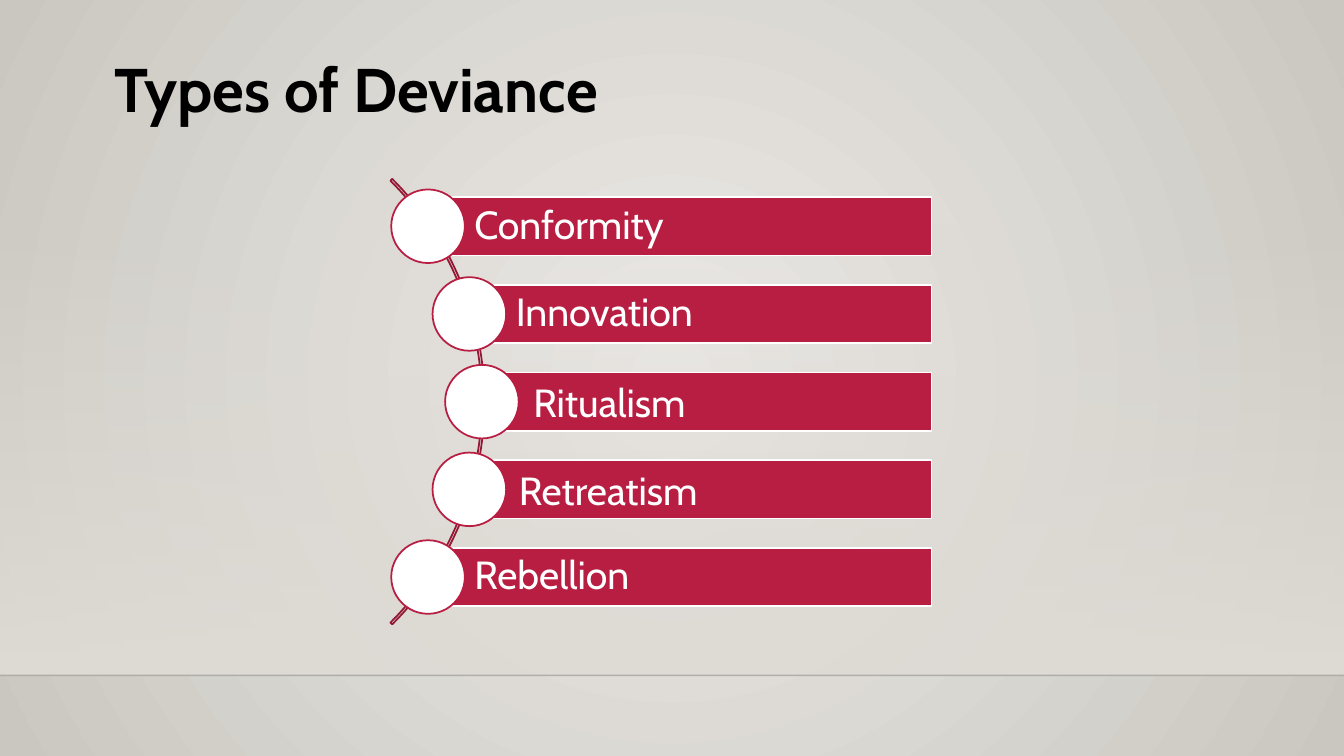
from dataclasses import dataclass
from math import sqrt

from lxml.etree import SubElement
from pptx import Presentation
from pptx.dml.color import RGBColor
from pptx.enum.shapes import MSO_CONNECTOR, MSO_SHAPE
from pptx.enum.text import MSO_ANCHOR, PP_ALIGN
from pptx.oxml.ns import qn
from pptx.util import Inches, Pt


@dataclass(frozen=True)
class Theme:
    font: str = "Cabin"
    black: RGBColor = RGBColor.from_string("000000")
    white: RGBColor = RGBColor.from_string("FFFFFF")
    crimson: RGBColor = RGBColor.from_string("B71E42")
    dark_crimson: RGBColor = RGBColor.from_string("931835")
    glow: RGBColor = RGBColor.from_string("ECEAE7")
    edge: RGBColor = RGBColor.from_string("CAC7C1")
    wall: RGBColor = RGBColor.from_string("DFDBD5")
    title_size: int = 44
    label_size: int = 28
    outline: float = 1.25


THEME = Theme()
WIDTH, HEIGHT = 13.33, 7.5
FLOOR = 6.7

# label, left inset in inches, line spacing
TYPES = [
    ("Conformity", 0.46, 0.9),
    ("Innovation", 0.46, 0.9),
    ("Ritualism", 0.51, 1.0),
    ("Retreatism", 0.49, 1.0),
    ("Rebellion", 0.46, 0.9),
]


def apply(target, formats):
    for name, value in formats.items():
        setattr(target, name, value)


def set_alpha(color_element, percent):
    SubElement(color_element, qn("a:alpha")).set("val", str(percent * 1000))


def set_stops(fill, colors):
    fill.gradient()
    for stop, color in zip(fill.gradient_stops, colors):
        stop.color.rgb = color


def add_outlined(page, kind, box, fill, line):
    """Add a flat preset shape; a fill of None leaves it open."""
    shape = page.shapes.add_shape(kind, *map(Inches, box))
    shape.shadow.inherit = False
    if fill is None:
        shape.fill.background()
    else:
        shape.fill.solid()
        shape.fill.fore_color.rgb = fill
    shape.line.color.rgb = line
    shape.line.width = Pt(THEME.outline)
    return shape


def write_text(shape, text, frame_format, para_format, font_format, color):
    frame = shape.text_frame
    apply(frame, {"word_wrap": True, "vertical_anchor": MSO_ANCHOR.MIDDLE, **frame_format})
    para = frame.paragraphs[0]
    apply(para, para_format)
    span = para.add_run()
    span.text = text
    apply(span.font, {"name": THEME.font, **font_format})
    span.font.color.rgb = color


def draw_backdrop(page, wall_box):
    """Radial background, a wall that fades in downwards, and the floor line."""
    set_stops(page.background.fill, (THEME.glow, THEME.edge))
    gradient = page._element.find(".//" + qn("a:gradFill"))
    gradient.remove(gradient.find(qn("a:lin")))
    path = SubElement(gradient, qn("a:path"))
    path.set("path", "circle")
    centre = SubElement(path, qn("a:fillToRect"))
    for side in "ltrb":
        centre.set(side, "50000")

    left, top, width, height = wall_box
    wall = page.shapes.add_shape(MSO_SHAPE.RECTANGLE, *map(Inches, wall_box))
    wall.shadow.inherit = False
    wall.line.fill.background()
    set_stops(wall.fill, (THEME.wall, THEME.wall))
    wall.fill.gradient_angle = 270
    set_alpha(wall._element.spPr.find(".//" + qn("a:srgbClr")), 0)

    bottom = top + height
    floor = page.shapes.add_connector(
        MSO_CONNECTOR.STRAIGHT, *map(Inches, (left, bottom, left + width, bottom)))
    floor.line.color.rgb = THEME.black
    floor.line.width = Pt(1)
    properties = floor._element.spPr
    set_alpha(properties.find(".//" + qn("a:srgbClr")), 20)
    SubElement(properties, qn("a:effectLst"))


def draw_title(page, box, text):
    write_text(
        page.shapes.add_textbox(*map(Inches, box)), text, {},
        {"alignment": PP_ALIGN.CENTER, "line_spacing": 0.9},
        {"size": Pt(THEME.title_size), "bold": True}, THEME.black)


def draw_curved_list(page, box, types):
    """Bars whose left ends, marked by discs, follow an arc bulging right."""
    left, top, width, height = box
    arc_size, radius, pitch = 6.25, 3.1, 0.87
    bar_height, disc_size = 0.58, 0.73
    centre_x, centre_y = left - 2.2, top + height / 2

    arc = add_outlined(
        page, MSO_SHAPE.BLOCK_ARC,
        (centre_x - arc_size / 2, centre_y - arc_size / 2, arc_size, arc_size),
        None, THEME.dark_crimson)
    for index, value in enumerate((189, 27, 0.004)):
        arc.adjustments[index] = value

    for index, (label, inset, spacing) in enumerate(types):
        offset = (index - (len(types) - 1) / 2) * pitch
        x = centre_x + sqrt(radius ** 2 - offset ** 2)
        y = centre_y + offset
        bar = add_outlined(
            page, MSO_SHAPE.RECTANGLE,
            (x, y - bar_height / 2, left + width - x, bar_height),
            THEME.crimson, THEME.white)
        margins = {f"margin_{side}": Inches(0.08) for side in ("top", "right", "bottom")}
        write_text(
            bar, label, {**margins, "margin_left": Inches(inset)},
            {"alignment": PP_ALIGN.LEFT, "line_spacing": spacing},
            {"size": Pt(THEME.label_size)}, THEME.white)
        add_outlined(
            page, MSO_SHAPE.OVAL,
            (x - disc_size / 2, y - disc_size / 2, disc_size, disc_size),
            THEME.white, THEME.crimson)


def main():
    deck = Presentation()
    apply(deck, {"slide_width": Inches(WIDTH), "slide_height": Inches(HEIGHT)})
    page = deck.slides.add_slide(deck.slide_layouts[6])
    draw_backdrop(page, (0, 2.21, WIDTH, FLOOR - 2.21))
    draw_title(page, (0.15, 0, 6.77, 1.83), "Types of Deviance")
    draw_curved_list(page, (3.88, 1.78, 5.36, 4.41), TYPES)
    deck.save("out.pptx")


if __name__ == "__main__":
    main()
